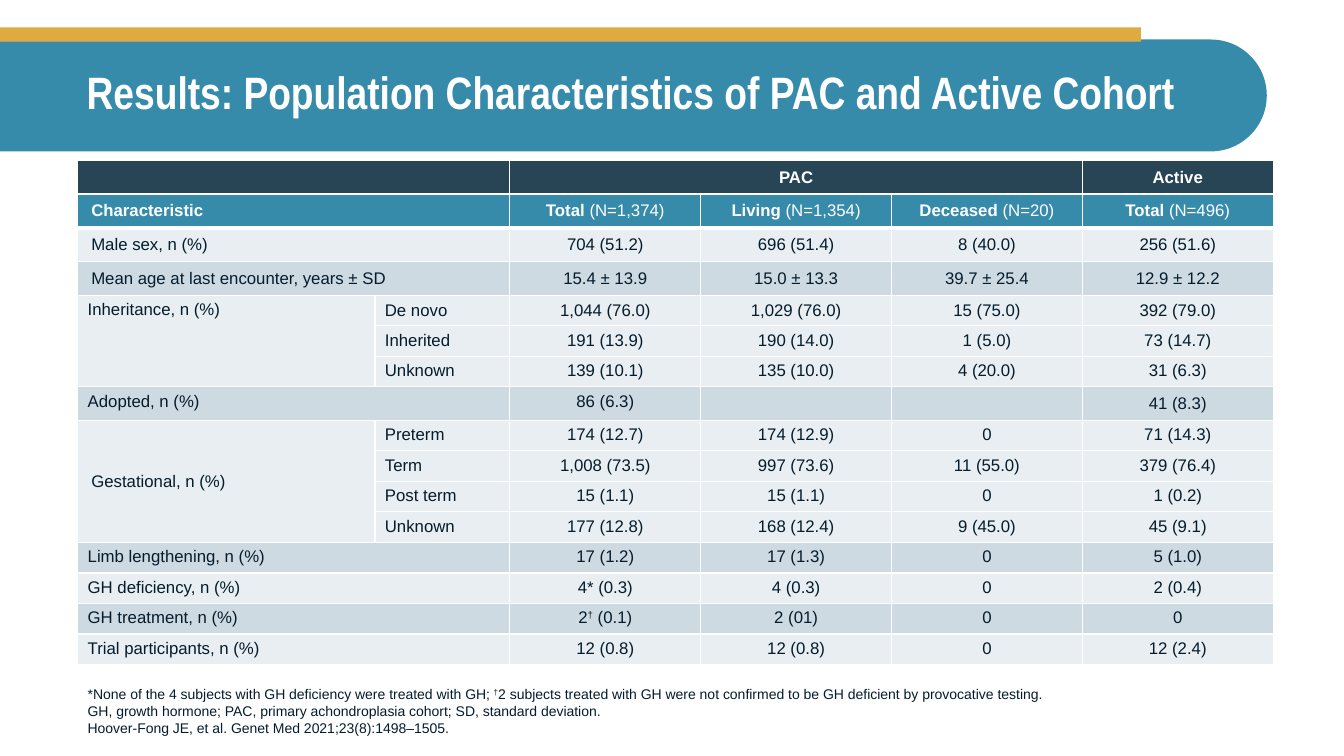
import pptx
import pptx.dml.color
import pptx.enum.shapes
import pptx.enum.text
import pptx.oxml
import pptx.oxml.ns
import pptx.util
from pptx.util import Cm

NAVY, TEAL, GOLD, INK, WHITE = "274554", "368BAB", "DFAA40", "051C2C", "FFFFFF"
PALE, GREY = "E8EEF1", "CEDAE2"
ANCHOR = pptx.enum.text.MSO_ANCHOR
ALIGN = pptx.enum.text.PP_ALIGN
PRESET = pptx.enum.shapes.MSO_SHAPE


def color(hex_code):
    return pptx.dml.color.RGBColor.from_string(hex_code)


def write(paragraph, text, size, ink, bold=False, face="Arial"):
    before, dagger, after = text.partition("†")
    for part in (before, dagger, after):
        if part:
            run = paragraph.add_run()
            run.text = part
            run.font.size = pptx.util.Pt(size)
            run.font.name = face
            run.font.bold = bold
            run.font.color.rgb = color(ink)
            if part == "†":
                run.font._element.set("baseline", "30000")


deck = pptx.Presentation()
deck.slide_width, deck.slide_height = Cm(33.87), Cm(19.05)
slide = deck.slides.add_slide(deck.slide_layouts[5])

banner = slide.shapes.add_shape(
    PRESET.ROUND_2_SAME_RECTANGLE, Cm(14.55), Cm(-13.56), Cm(2.82), Cm(31.93))
banner.rotation = 270
banner.adjustments[0] = 0
banner.adjustments[1] = 0.5
stripe = slide.shapes.add_shape(PRESET.RECTANGLE, 0, Cm(0.69), Cm(28.75), Cm(0.36))
for band, fill in ((banner, TEAL), (stripe, GOLD)):
    band.shadow.inherit = False
    band.fill.solid()
    band.fill.fore_color.rgb = color(fill)
    band.line.fill.background()

title = slide.shapes.title
slide.shapes._spTree.append(title._element)
title.left, title.top, title.width, title.height = Cm(1.93), Cm(0.99), Cm(30), Cm(2.79)
title.text_frame.word_wrap = True
title.text_frame.auto_size = pptx.enum.text.MSO_AUTO_SIZE.NONE
title.text_frame.vertical_anchor = ANCHOR.MIDDLE
heading = title.text_frame.paragraphs[0]
heading.alignment = ALIGN.LEFT
heading.line_spacing = 0.9
write(heading, "Results: Population Characteristics of PAC and Active Cohort",
      32.4, WHITE, True, "Arial Narrow")

footnotes = slide.shapes.add_textbox(Cm(1.96), Cm(17.04), Cm(25.1), Cm(1.63)).text_frame
footnotes.word_wrap = True
footnotes.vertical_anchor = ANCHOR.BOTTOM
notes = [
    "*None of the 4 subjects with GH deficiency were treated with GH; †2 subjects treated "
    "with GH were not confirmed to be GH deficient by provocative testing.",
    "GH, growth hormone; PAC, primary achondroplasia cohort; SD, standard deviation.",
    "Hoover-Fong JE, et al. Genet Med 2021;23(8):1498–1505.",
]
for index, note in enumerate(notes):
    line = footnotes.add_paragraph() if index else footnotes.paragraphs[0]
    write(line, note, 10, INK)

rows = [
    (NAVY, "", "", "PAC", "", "", "Active"),
    (TEAL, "Characteristic", "", "Total (N=1,374)", "Living (N=1,354)", "Deceased (N=20)",
     "Total (N=496)"),
    (PALE, "Male sex, n (%)", "", "704 (51.2)", "696 (51.4)", "8 (40.0)", "256 (51.6)"),
    (GREY, "Mean age at last encounter, years ± SD", "", "15.4 ± 13.9", "15.0 ± 13.3",
     "39.7 ± 25.4", "12.9 ± 12.2"),
    (PALE, "Inheritance, n (%)", "De novo", "1,044 (76.0)", "1,029 (76.0)", "15 (75.0)",
     "392 (79.0)"),
    (PALE, "", "Inherited", "191 (13.9)", "190 (14.0)", "1 (5.0)", "73 (14.7)"),
    (PALE, "", "Unknown", "139 (10.1)", "135 (10.0)", "4 (20.0)", "31 (6.3)"),
    (GREY, "Adopted, n (%)", "", "86 (6.3)", "", "", "41 (8.3)"),
    (PALE, "Gestational, n (%)", "Preterm", "174 (12.7)", "174 (12.9)", "0", "71 (14.3)"),
    (PALE, "", "Term", "1,008 (73.5)", "997 (73.6)", "11 (55.0)", "379 (76.4)"),
    (PALE, "", "Post term", "15 (1.1)", "15 (1.1)", "0", "1 (0.2)"),
    (PALE, "", "Unknown", "177 (12.8)", "168 (12.4)", "9 (45.0)", "45 (9.1)"),
    (GREY, "Limb lengthening, n (%)", "", "17 (1.2)", "17 (1.3)", "0", "5 (1.0)"),
    (PALE, "GH deficiency, n (%)", "", "4* (0.3)", "4 (0.3)", "0", "2 (0.4)"),
    (GREY, "GH treatment, n (%)", "", "2† (0.1)", "2 (01)", "0", "0"),
    (PALE, "Trial participants, n (%)", "", "12 (0.8)", "12 (0.8)", "0", "12 (2.4)"),
]
tall_rows = (0, 1, 2, 3, 7)
roomy_cells = ((2, 0), (3, 0), (7, 5), (8, 0))
column_widths = [7.49, 3.4] + [4.81] * 4

cohort = slide.shapes.add_table(
    len(rows), 6, Cm(1.96), Cm(4.04), Cm(30.13), Cm(12.08)).table
cohort.first_row = cohort.horz_banding = False
for column, width in zip(cohort.columns, column_widths):
    column.width = Cm(width)

for r, (fill, *texts) in enumerate(rows):
    cohort.rows[r].height = Cm(0.81 if r in tall_rows else 0.73)
    for c, text in enumerate(texts):
        cell = cohort.cell(r, c)
        for side in "LRTB":
            thick = (r, side) in ((1, "B"), (2, "T"))
            edge = pptx.oxml.parse_xml(
                f'<a:ln{side} {pptx.oxml.ns.nsdecls("a")} w="{38100 if thick else 12700}">'
                f'<a:solidFill><a:srgbClr val="{WHITE}"/></a:solidFill></a:ln{side}>')
            cell._tc.get_or_add_tcPr().append(edge)
        cell.fill.solid()
        cell.fill.fore_color.rgb = color(fill)

        roomy = r < 2 or (r, c) in roomy_cells
        cell.margin_left = cell.margin_right = Cm(0.34 if roomy else 0.25)
        cell.margin_top = cell.margin_bottom = Cm(0.17 if roomy else 0.13)
        centred = roomy or (r in (2, 3, 4) and (r, c) != (4, 0))
        cell.vertical_anchor = ANCHOR.MIDDLE if centred else ANCHOR.TOP

        entry = cell.text_frame.paragraphs[0]
        entry.alignment = ALIGN.CENTER if c > 1 else ALIGN.LEFT
        if not text:
            entry._p.get_or_add_endParaRPr().set("sz", "1200")
        elif r < 2:
            group, bracket, count = text.partition("(")
            write(entry, group, 12, WHITE, True)
            write(entry, bracket + count, 12, WHITE)
        else:
            write(entry, text, 12, INK)
    if r and texts[0] and not texts[1]:
        cohort.cell(r, 0).merge(cohort.cell(r, 1))

for first, last in (((0, 0), (0, 1)), ((0, 2), (0, 4)), ((4, 0), (6, 0)), ((8, 0), (11, 0))):
    cohort.cell(*first).merge(cohort.cell(*last))

deck.save("out.pptx")
